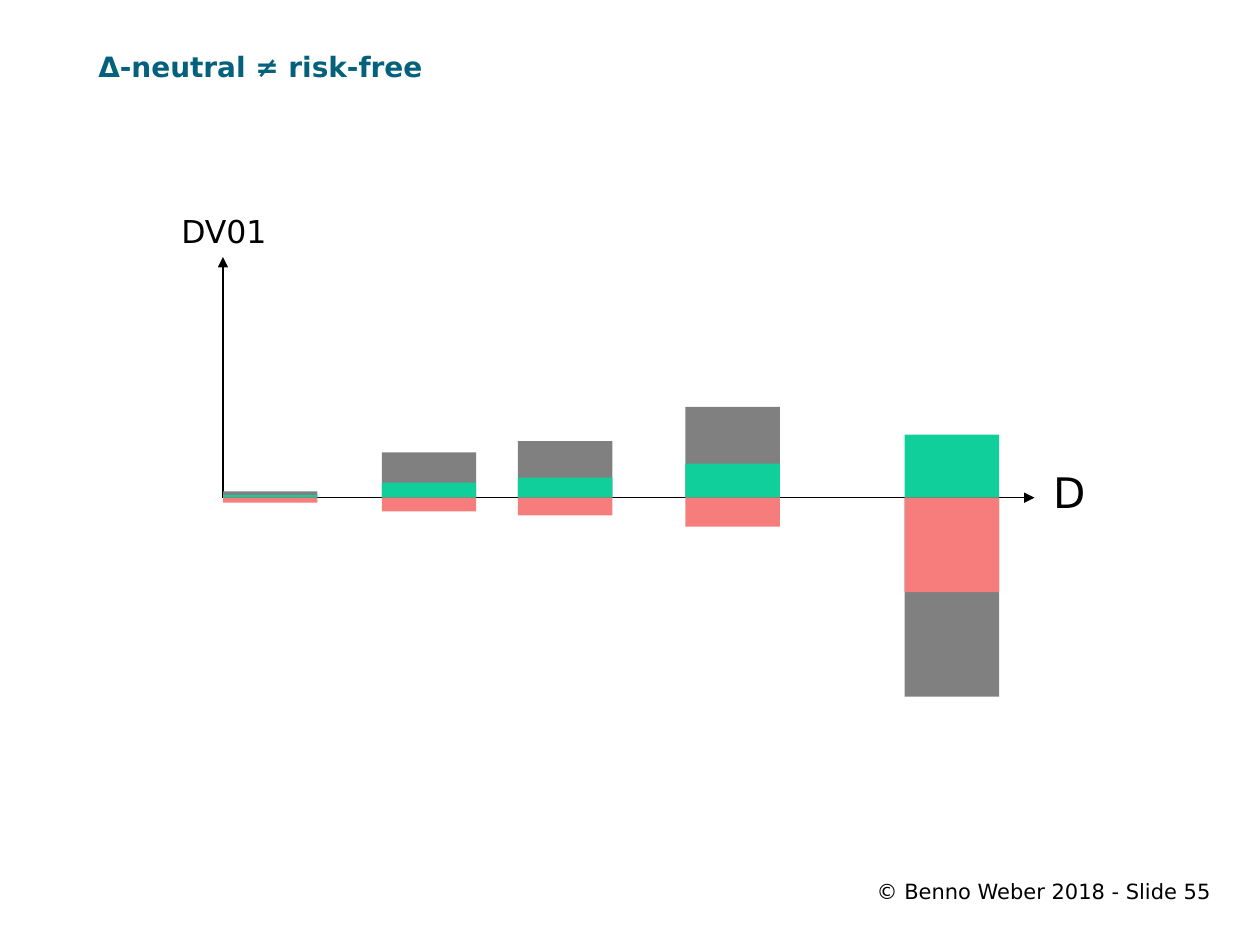
from dataclasses import dataclass

from lxml.etree import SubElement
from pptx import Presentation
from pptx.dml.color import RGBColor
from pptx.enum.shapes import MSO_CONNECTOR, MSO_SHAPE
from pptx.enum.text import MSO_ANCHOR, PP_ALIGN
from pptx.oxml.ns import qn
from pptx.util import Inches, Pt


@dataclass(frozen=True)
class Theme:
    font: str = "DejaVu Sans"
    title: str = "04617B"
    ink: str = "000000"
    grey: str = "808080"
    green: str = "10CF9B"
    red: str = "F77D7D"
    title_size: int = 16
    footer_size: int = 12
    y_label_size: int = 18
    x_label_size: int = 24
    axis_width: float = 0.75


class SlideBuilder:
    def __init__(self, slide, theme):
        self.slide = slide
        self.theme = theme

    def set_text(self, sp, text, size, color, bold=False, align=PP_ALIGN.LEFT,
                 inset=(0.1, 0.05)):
        tf = sp.text_frame
        tf.word_wrap = True
        tf.vertical_anchor = MSO_ANCHOR.TOP
        tf.margin_left = tf.margin_right = Inches(inset[0])
        tf.margin_top = tf.margin_bottom = Inches(inset[1])
        tf.text = text
        p = tf.paragraphs[0]
        p.alignment = align
        font = p.runs[0].font
        font.name, font.size, font.bold = self.theme.font, Pt(size), bold
        font.color.rgb = RGBColor.from_string(color)

    def title(self, text, left, top, width, height):
        sp = self.slide.shapes.title
        sp.left, sp.top = Inches(left), Inches(top)
        sp.width, sp.height = Inches(width), Inches(height)
        self.set_text(sp, text, self.theme.title_size, self.theme.title,
                      bold=True, inset=(0.08, 0.08))

    def label(self, text, left, top, width, height, size, **style):
        sp = self.slide.shapes.add_textbox(
            Inches(left), Inches(top), Inches(width), Inches(height))
        self.set_text(sp, text, size, self.theme.ink, **style)

    def arrow(self, x1, y1, x2, y2):
        axis = self.slide.shapes.add_connector(
            MSO_CONNECTOR.STRAIGHT, Inches(x1), Inches(y1), Inches(x2), Inches(y2))
        axis.line.color.rgb = RGBColor.from_string(self.theme.ink)
        axis.line.width = Pt(self.theme.axis_width)
        sp_pr = axis._element.spPr
        SubElement(sp_pr.find(qn("a:ln")), qn("a:tailEnd"), type="triangle")
        SubElement(sp_pr, qn("a:effectLst"))

    def bar(self, left, base, width, value, color):
        """Draw a bar from the base line, upwards when value is positive."""
        sp = self.slide.shapes.add_shape(
            MSO_SHAPE.RECTANGLE, Inches(left), Inches(base - max(value, 0)),
            Inches(width), Inches(abs(value)))
        sp.shadow.inherit = False
        sp.fill.solid()
        sp.fill.fore_color.rgb = RGBColor.from_string(color)
        sp.line.fill.background()


ORIGIN_X, BASE_Y, BAR_WIDTH = 1.77, 3.95, 0.75
# Left edge, then grey, green and red heights from the axis
BARS = [
    (1.77, 0.05, 0.02, -0.04),
    (3.03, 0.36, 0.12, -0.11),
    (4.11, 0.45, 0.16, -0.14),
    (5.44, 0.72, 0.27, -0.23),
    (7.18, -1.58, 0.5, -0.75),
]


def main():
    prs = Presentation()
    prs.slide_width, prs.slide_height = Inches(10), Inches(7.5)
    theme = Theme()
    s = SlideBuilder(prs.slides.add_slide(prs.slide_layouts[5]), theme)

    # Title and footer
    s.title("Δ-neutral ≠ risk-free", 0.7, 0.31, 8.93, 0.46)
    s.label("© Benno Weber 2018 - Slide 55", 5.45, 6.89, 4.24, 0.36,
            theme.footer_size, align=PP_ALIGN.RIGHT, inset=(0.08, 0.08))

    # Axes
    s.arrow(ORIGIN_X, BASE_Y, 8.21, BASE_Y)
    s.arrow(ORIGIN_X, BASE_Y, ORIGIN_X, 2.04)
    s.label("D", 8.26, 3.65, 0.45, 0.91, theme.x_label_size)
    s.label("DV01", 1.34, 1.63, 1.39, 0.71, theme.y_label_size)

    # Bars: grey at the back, green and red in front
    for left, *values in BARS:
        for value, color in zip(values, (theme.grey, theme.green, theme.red)):
            s.bar(left, BASE_Y, BAR_WIDTH, value, color)

    prs.save("out.pptx")


if __name__ == "__main__":
    main()
